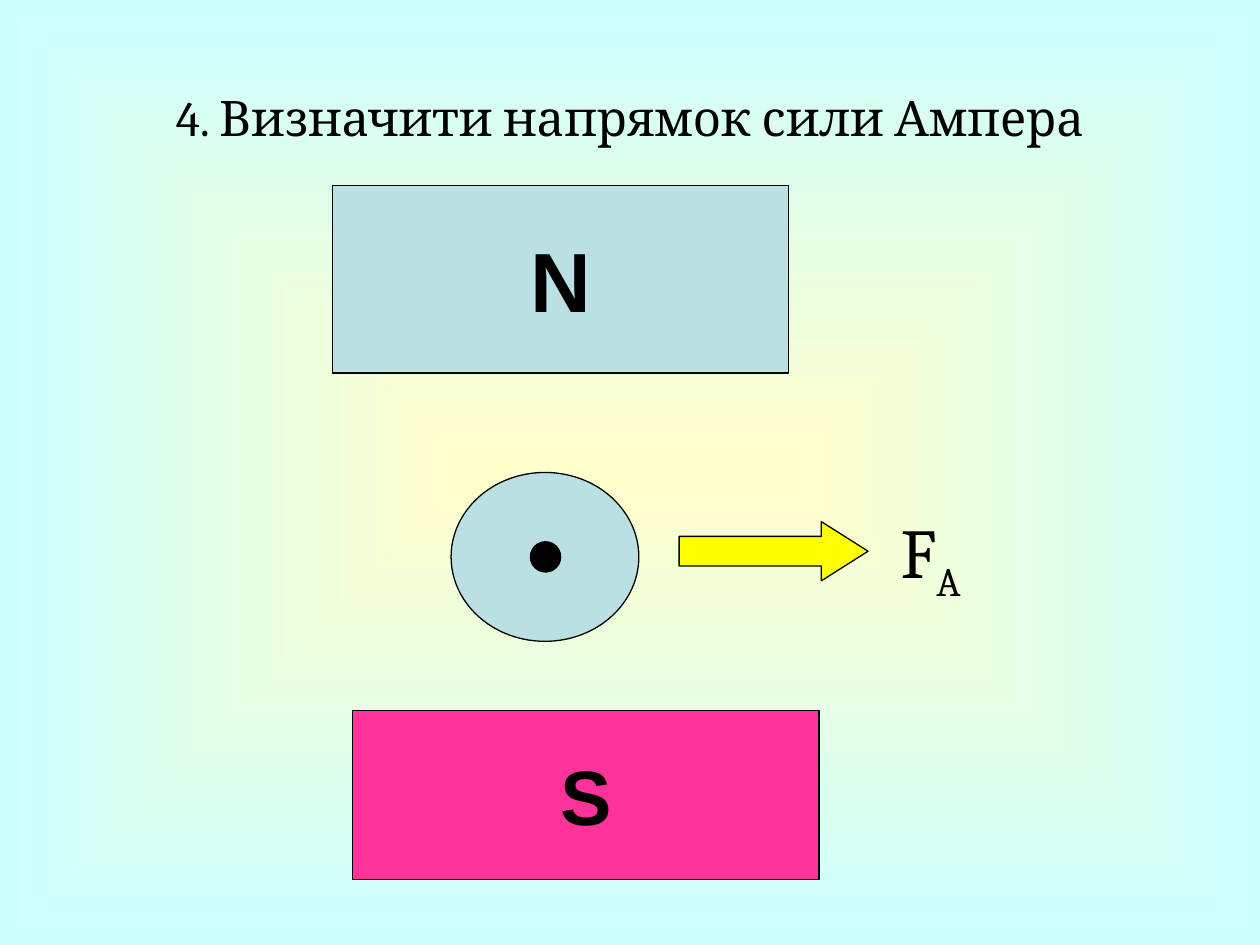
from pptx import Presentation
from pptx.dml.color import RGBColor
from pptx.enum.shapes import MSO_SHAPE
from pptx.enum.text import MSO_ANCHOR, PP_ALIGN
from pptx.oxml import parse_xml
from pptx.oxml.ns import nsdecls, qn
from pptx.util import Inches, Pt

BLACK = RGBColor(0x00, 0x00, 0x00)
BLUE = RGBColor(0xBB, 0xE0, 0xE3)
PINK = RGBColor(0xFF, 0x33, 0x99)
YELLOW = RGBColor(0xFF, 0xFF, 0x00)
CREAM = RGBColor(0xFF, 0xFF, 0xCC)
CYAN = RGBColor(0xCC, 0xFF, 0xFF)

deck = Presentation()
deck.slide_width, deck.slide_height = Inches(10), Inches(7.5)
slide = deck.slides.add_slide(deck.slide_layouts[6])


def add_run(para, text, size, font, bold=False):
    run = para.add_run()
    run.text = text
    run.font.size = Pt(size)
    run.font.name = font
    run.font.bold = bold
    run.font.color.rgb = BLACK
    return run


def add_part(kind, box, color):
    part = slide.shapes.add_shape(kind, *map(Inches, box))
    part.shadow.inherit = False
    part.fill.solid()
    part.fill.fore_color.rgb = color
    part.line.color.rgb = BLACK
    part.line.width = Pt(0.75)
    return part


# Background: gradient spreading from the centre
slide.background.fill.solid()
back = slide.element.find(".//" + qn("p:bgPr"))
back.replace(back[0], parse_xml(
    f'<a:gradFill {nsdecls("a")} rotWithShape="1"><a:gsLst>'
    f'<a:gs pos="0"><a:srgbClr val="{CREAM}"/></a:gs>'
    f'<a:gs pos="100000"><a:srgbClr val="{CYAN}"/></a:gs></a:gsLst>'
    '<a:path path="shape"><a:fillToRect l="50000" t="50000" r="50000" b="50000"/>'
    '</a:path></a:gradFill>'))

# Title
title = slide.shapes.add_textbox(Inches(0.5), Inches(0.3), Inches(9), Inches(1.25))
frame = title.text_frame
frame.word_wrap = True
frame.vertical_anchor = MSO_ANCHOR.MIDDLE
frame.paragraphs[0].alignment = PP_ALIGN.CENTER
add_run(frame.paragraphs[0], "4. Визначити напрямок сили Ампера", 28, "Cambria")

# Magnet poles
for name, size, color, box in (
    ("N", 48, BLUE, (2.64, 1.47, 3.62, 1.49)),
    ("S", 44, PINK, (2.8, 5.64, 3.7, 1.34)),
):
    frame = add_part(MSO_SHAPE.RECTANGLE, box, color).text_frame
    frame.word_wrap = False
    frame.vertical_anchor = MSO_ANCHOR.MIDDLE
    frame.paragraphs[0].alignment = PP_ALIGN.CENTER
    add_run(frame.paragraphs[0], name, size, "Arial", True)

# Wire with the current coming toward the viewer
add_part(MSO_SHAPE.OVAL, (3.58, 3.75, 1.49, 1.34), BLUE)
add_part(MSO_SHAPE.OVAL, (4.21, 4.3, 0.24, 0.24), BLACK)

# Force arrow and its label
arrow = add_part(MSO_SHAPE.RIGHT_ARROW, (5.39, 4.14, 1.5, 0.47), YELLOW)
arrow.adjustments[1] = 0.79
label = slide.shapes.add_textbox(Inches(7.05), Inches(3.99), Inches(1.34), Inches(0.77))
label.text_frame.word_wrap = True
para = label.text_frame.paragraphs[0]
add_run(para, "F", 40, "Cambria")
sub = add_run(para, "A", 40, "Cambria")
sub.font._element.set("baseline", "-25000")

deck.save("out.pptx")
